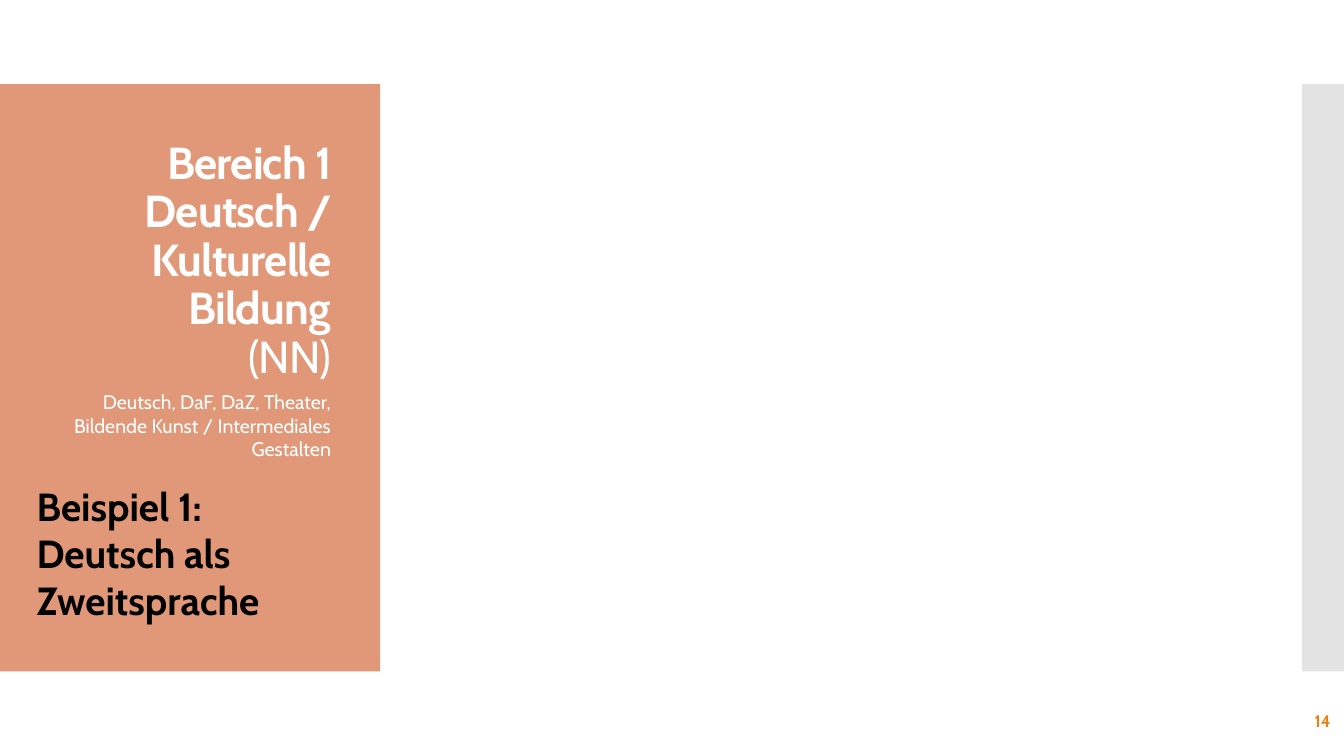
from dataclasses import dataclass

from lxml import etree
from pptx import Presentation
from pptx.dml.color import RGBColor
from pptx.enum.shapes import MSO_SHAPE
from pptx.enum.text import MSO_ANCHOR, PP_ALIGN
from pptx.oxml.ns import qn
from pptx.util import Pt


@dataclass(frozen=True)
class Theme:
    font: str = "Cabin"
    panel: str = "E09878"
    edge: str = "C8C8C8"
    accent: str = "E48312"
    light: str = "FFFFFF"
    dark: str = "000000"
    heading_size: int = 32
    example_size: int = 28
    subjects_size: int = 14
    number_size: int = 12


THEME = Theme()
SLIDE_WIDTH, SLIDE_HEIGHT = 960, 540
BAND_TOP, BAND_HEIGHT = 60, 419.5


def add_block(slide, box, color, opacity=None):
    block = slide.shapes.add_shape(MSO_SHAPE.RECTANGLE, *map(Pt, box))
    block.shadow.inherit = False
    block.line.fill.background()
    block.fill.solid()
    block.fill.fore_color.rgb = RGBColor.from_string(color)
    if opacity is not None:
        fill_color = block.fill._xPr.find(qn("a:solidFill"))[0]
        etree.SubElement(fill_color, qn("a:alpha")).set("val", str(opacity * 1000))


def add_text(slide, box, text, *, size, color, bold=False, align=PP_ALIGN.LEFT,
             anchor=MSO_ANCHOR.TOP, line_spacing=None, tracking=None, plain_line=None):
    """Add a text box; plain_line follows on a new line without bold."""
    frame = slide.shapes.add_textbox(*map(Pt, box)).text_frame
    frame.word_wrap = True
    frame.vertical_anchor = anchor
    paragraph = frame.paragraphs[0]
    paragraph.alignment = align
    paragraph.line_spacing = line_spacing
    lines = [(text, bold)]
    if plain_line:
        lines.append((plain_line, False))
    for index, (line, is_bold) in enumerate(lines):
        if index:
            paragraph.add_line_break()
        run = paragraph.add_run()
        run.text = line
        run.font.name = THEME.font
        run.font.size = Pt(size)
        run.font.bold = is_bold
        run.font.color.rgb = RGBColor.from_string(color)
        if tracking is not None:
            run.font._element.set("spc", str(round(tracking * 100)))


def add_topic_panel(slide, box):
    left, top, width, _ = box
    add_block(slide, box, THEME.panel)
    inset_left, text_width = left + 20, width - 48
    add_text(slide, (inset_left, top + 30, text_width, 187),
             "Bereich 1 Deutsch / Kulturelle Bildung", plain_line="(NN)",
             size=THEME.heading_size, color=THEME.light, bold=True,
             align=PP_ALIGN.RIGHT, anchor=MSO_ANCHOR.BOTTOM,
             line_spacing=0.9, tracking=-0.6)
    add_text(slide, (inset_left, top + 215, text_width, 60),
             "Deutsch, DaF, DaZ, Theater, Bildende Kunst / Intermediales Gestalten",
             size=THEME.subjects_size, color=THEME.light, align=PP_ALIGN.RIGHT)
    add_text(slide, (left + 19, top + 281, 207, 109),
             "Beispiel 1: Deutsch als Zweitsprache",
             size=THEME.example_size, color=THEME.dark, bold=True)


def add_page_number(slide, box, number):
    add_text(slide, box, number, size=THEME.number_size, color=THEME.accent,
             bold=True, align=PP_ALIGN.RIGHT, anchor=MSO_ANCHOR.MIDDLE)


def main():
    presentation = Presentation()
    presentation.slide_width = Pt(SLIDE_WIDTH)
    presentation.slide_height = Pt(SLIDE_HEIGHT)
    slide = presentation.slides.add_slide(presentation.slide_layouts[6])
    edge_width = 30
    add_block(slide, (SLIDE_WIDTH - edge_width, BAND_TOP, edge_width, BAND_HEIGHT),
              THEME.edge, opacity=50)
    add_topic_panel(slide, (0, BAND_TOP, 271.5, BAND_HEIGHT))
    add_page_number(slide, (837.5, 500.5, 120, 29), "14")
    presentation.save("out.pptx")


if __name__ == "__main__":
    main()
